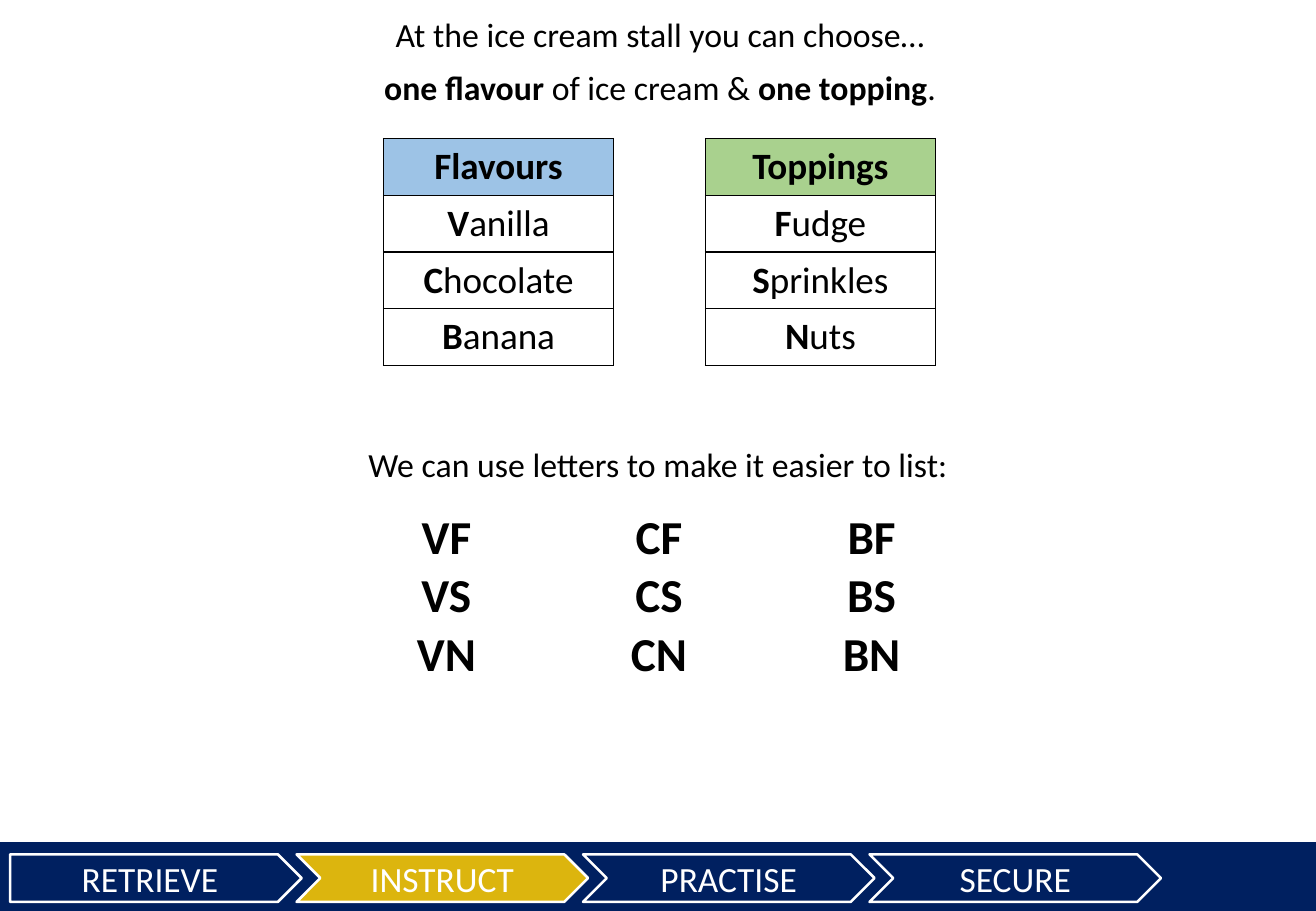
from itertools import product

from lxml.etree import SubElement
from pptx import Presentation
from pptx.dml.color import RGBColor
from pptx.enum.shapes import MSO_SHAPE
from pptx.enum.text import MSO_ANCHOR, PP_ALIGN
from pptx.oxml.ns import qn
from pptx.util import Emu, Pt

FONT = "Calibri"
BLACK = RGBColor(0x00, 0x00, 0x00)
WHITE = RGBColor(0xFF, 0xFF, 0xFF)
NAVY = RGBColor(0x00, 0x20, 0x60)
GOLD = RGBColor(0xDC, 0xB5, 0x0E)
BLUE = RGBColor(0x9D, 0xC3, 0xE6)
GREEN = RGBColor(0xA9, 0xD1, 0x8E)

# Each line is a list of (text, bold) runs
INTRO = [
    [("At the ice cream stall you can choose…", False)],
    [("one flavour ", True), ("of ice cream & ", False),
     ("one topping", True), (".", False)],
]
FLAVOURS = ["Vanilla", "Chocolate", "Banana"]
TOPPINGS = ["Fudge", "Sprinkles", "Nuts"]
MENUS = [("Flavours", FLAVOURS, BLUE, 379), ("Toppings", TOPPINGS, GREEN, 697)]
LIST_HINT = [[("We can use letters to make it easier to list:", False)]]
STAGES = ["RETRIEVE", "INSTRUCT", "PRACTISE", "SECURE"]
CURRENT_STAGE = "INSTRUCT"

PX = 7620  # 120 px to the inch
SLIDE_W, SLIDE_H = 1300, 900
INTRO_CENTRE, HINT_CENTRE = 652, 650
MENU_TOP, MENU_W, MENU_ROW_H = 137, 227, 56
CODE_LEFT, CODE_TOP, CODE_W, CODE_H = 399, 495, 84, 68
CODE_STEP_X, CODE_STEP_Y = 210, 58
BAND_TOP = 832
STAGE_LEFT, STAGE_TOP, STAGE_W, STAGE_H, STAGE_STEP = 10, 844, 288, 47, 283


def px(*lengths):
    return [Emu(length * PX) for length in lengths]


def write(paragraph, runs, size, color=BLACK):
    """Fill a centred paragraph with (text, bold) runs."""
    paragraph.alignment = PP_ALIGN.CENTER
    font = paragraph.font
    font.name, font.size, font.color.rgb = FONT, Pt(size), color
    for text, bold in runs:
        run = paragraph.add_run()
        run.text = text
        run.font.bold = bold


def add_text(slide, box, lines, size, gap=0):
    frame = slide.shapes.add_textbox(*px(*box)).text_frame
    frame.word_wrap = True
    for i, runs in enumerate(lines):
        paragraph = frame.add_paragraph() if i else frame.paragraphs[0]
        if i:
            paragraph.space_before = Pt(gap)
        write(paragraph, runs, size)


def add_block(slide, preset, box, fill):
    block = slide.shapes.add_shape(preset, *px(*box))
    block.shadow.inherit = False
    block.fill.solid()
    block.fill.fore_color.rgb = fill
    return block


def add_borders(cell):
    properties = cell._tc.get_or_add_tcPr()
    for i, side in enumerate(("lnL", "lnR", "lnT", "lnB")):
        line = properties.makeelement(qn(f"a:{side}"), {"w": str(Pt(1))})
        fill = SubElement(line, qn("a:solidFill"))
        SubElement(fill, qn("a:srgbClr"), val=str(BLACK))
        properties.insert(i, line)


def add_menu(slide, heading, items, heading_fill, left):
    rows = [[(heading, True)]]
    rows += [[(item[0], True), (item[1:], False)] for item in items]
    box = px(left, MENU_TOP, MENU_W, MENU_ROW_H * len(rows))
    table = slide.shapes.add_table(len(rows), 1, *box).table
    for i, runs in enumerate(rows):
        cell = table.cell(i, 0)
        cell.vertical_anchor = MSO_ANCHOR.MIDDLE
        cell.margin_top, cell.margin_bottom = px(4, 4)
        cell.fill.solid()
        cell.fill.fore_color.rgb = WHITE if i else heading_fill
        add_borders(cell)
        write(cell.text_frame.paragraphs[0], runs, 22)


def add_codes(slide):
    """List every flavour and topping pair by initials, one column a flavour."""
    pairs = product(enumerate(FLAVOURS), enumerate(TOPPINGS))
    for (column, flavour), (row, topping) in pairs:
        box = (CODE_LEFT + column * CODE_STEP_X, CODE_TOP + row * CODE_STEP_Y,
               CODE_W, CODE_H)
        add_text(slide, box, [[(flavour[0] + topping[0], True)]], 28)


def add_stage_bar(slide):
    band_box = (0, BAND_TOP, SLIDE_W, SLIDE_H - BAND_TOP)
    band = add_block(slide, MSO_SHAPE.RECTANGLE, band_box, NAVY)
    band.line.fill.background()
    for i, name in enumerate(STAGES):
        preset = MSO_SHAPE.CHEVRON if i else MSO_SHAPE.PENTAGON
        box = (STAGE_LEFT + i * STAGE_STEP, STAGE_TOP, STAGE_W, STAGE_H)
        stage = add_block(slide, preset, box,
                          GOLD if name == CURRENT_STAGE else NAVY)
        stage.line.color.rgb = WHITE
        stage.line.width = Pt(1.5)
        stage.text_frame.vertical_anchor = MSO_ANCHOR.MIDDLE
        write(stage.text_frame.paragraphs[0], [(name, False)], 21, WHITE)


def main():
    deck = Presentation()
    deck.slide_width, deck.slide_height = px(SLIDE_W, SLIDE_H)
    slide = deck.slides.add_slide(deck.slide_layouts[6])
    add_stage_bar(slide)
    add_text(slide, (INTRO_CENTRE - 310, 8, 620, 106), INTRO, 20, gap=7)
    for menu in MENUS:
        add_menu(slide, *menu)
    add_text(slide, (HINT_CENTRE - 310, 432, 620, 52), LIST_HINT, 20)
    add_codes(slide)
    deck.save("out.pptx")


if __name__ == "__main__":
    main()
